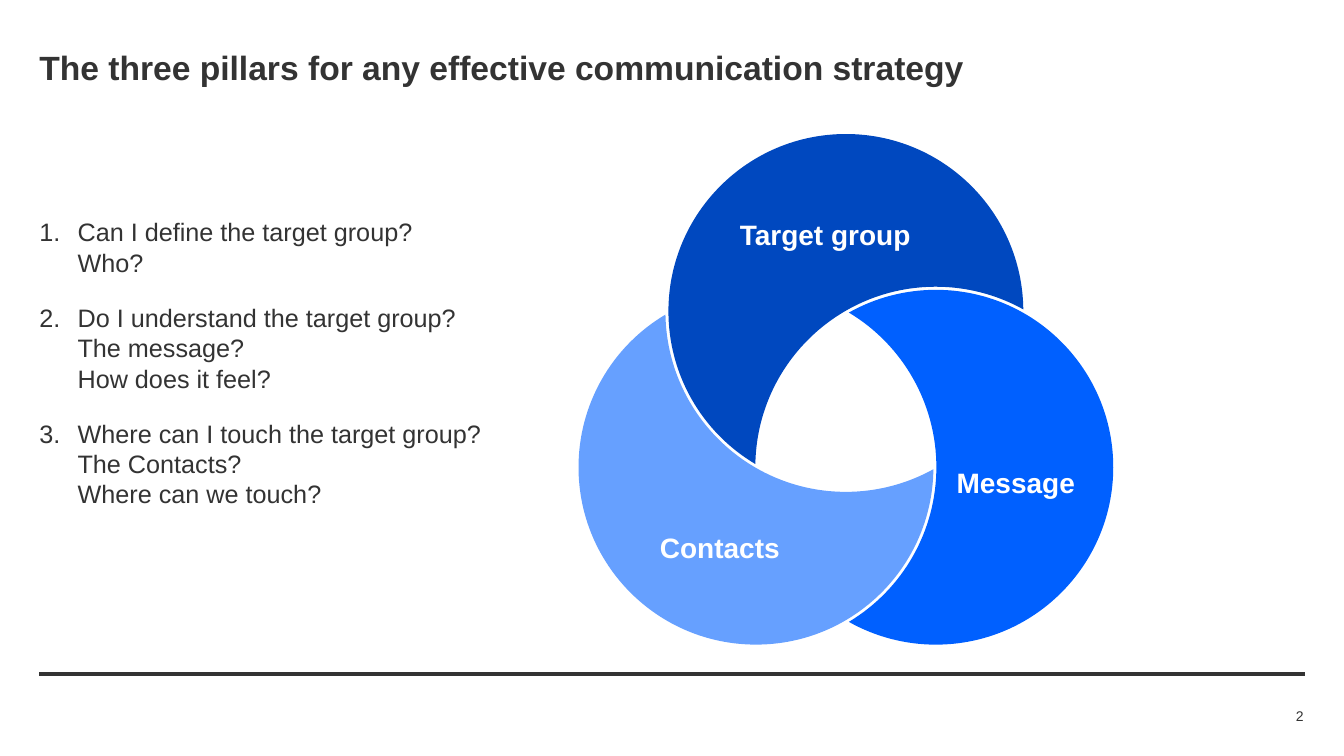
from math import acos, ceil, cos, floor, hypot, pi, radians, sin, tan

from lxml.etree import SubElement
from pptx import Presentation
from pptx.dml.color import RGBColor
from pptx.enum.shapes import MSO_CONNECTOR
from pptx.enum.text import MSO_ANCHOR, MSO_AUTO_SIZE, PP_ALIGN
from pptx.oxml.ns import qn
from pptx.util import Inches, Pt

DARK = RGBColor(0x33, 0x33, 0x33)
WHITE = RGBColor(0xFF, 0xFF, 0xFF)
NAVY = RGBColor(0x00, 0x48, 0xBF)
BLUE = RGBColor(0x00, 0x60, 0xFF)
SKY = RGBColor(0x66, 0xA0, 0xFF)

TITLE = "The three pillars for any effective communication strategy"
QUESTIONS = [
    ["Can I define the target group?", "Who?"],
    ["Do I understand the target group?", "The message?", "How does it feel?"],
    ["Where can I touch the target group?", "The Contacts?", "Where can we touch?"],
]
PILLARS = [
    ("Contacts", SKY, 150, (6.54, 5.26, 1.2, 0.34)),
    ("Message", BLUE, 30, (9.48, 4.61, 1.19, 0.34)),
    ("Target group", NAVY, 270, (7.33, 2.15, 1.71, 0.34)),
]
PAGE_NUMBER = "2"

RING_CENTER = (8.39, 4.12)
RING_RADIUS = 1.03
CIRCLE_RADIUS = 1.76
CUT_RADIUS = 1.79


def point_on(center, radius, angle):
    return center[0] + radius * cos(angle), center[1] + radius * sin(angle)


def arc_curves(center, radius, start, end):
    quarter = pi / 2
    low, high = sorted((start, end))
    turns = [index * quarter for index in range(ceil(low / quarter), floor(high / quarter) + 1)]
    angles = [start] + sorted(turns, reverse=end < start) + [end]
    curves = []
    for first, last in zip(angles, angles[1:]):
        reach = 4 / 3 * tan((last - first) / 4) * radius
        x1, y1 = point_on(center, radius, first)
        x2, y2 = point_on(center, radius, last)
        curves.append([
            (x1 - reach * sin(first), y1 + reach * cos(first)),
            (x2 + reach * sin(last), y2 - reach * cos(last)),
            (x2, y2),
        ])
    return curves


def crescent_curves(angle):
    center = point_on(RING_CENTER, RING_RADIUS, radians(angle))
    cutter = point_on(RING_CENTER, RING_RADIUS, radians(angle + 120))
    distance = hypot(cutter[0] - center[0], cutter[1] - center[1])
    toward = radians(angle + 150)
    outer = acos((distance**2 + CIRCLE_RADIUS**2 - CUT_RADIUS**2) / (2 * distance * CIRCLE_RADIUS))
    inner = acos((distance**2 + CUT_RADIUS**2 - CIRCLE_RADIUS**2) / (2 * distance * CUT_RADIUS))
    return arc_curves(center, CIRCLE_RADIUS, toward + outer, toward + 2 * pi - outer) + arc_curves(
        cutter, CUT_RADIUS, toward + pi + inner, toward + pi - inner
    )


def add_crescent(slide, angle, color):
    curves = crescent_curves(angle)
    nodes = [(Inches(x), Inches(y)) for *controls, (x, y) in curves]
    builder = slide.shapes.build_freeform(*nodes[-1])
    builder.add_line_segments(nodes, close=True)
    shape = builder.convert_to_shape()
    segments = list(shape._element.iter(qn("a:lnTo")))
    for segment, curve in zip(segments, curves):
        bezier = segment.getparent().makeelement(qn("a:cubicBezTo"))
        for x, y in curve:
            SubElement(bezier, qn("a:pt"), x=str(Inches(x) - shape.left), y=str(Inches(y) - shape.top))
        segment.getparent().replace(segment, bezier)
    shape.shadow.inherit = False
    shape.fill.solid()
    shape.fill.fore_color.rgb = color
    shape.line.fill.background()


def prepare_frame(shape, anchor, wrap=True):
    frame = shape.text_frame
    frame.margin_left = frame.margin_right = frame.margin_top = frame.margin_bottom = 0
    frame.auto_size = MSO_AUTO_SIZE.NONE
    frame.vertical_anchor = anchor
    frame.word_wrap = wrap
    return frame


def add_text_box(slide, box, anchor, wrap=True):
    return prepare_frame(slide.shapes.add_textbox(*map(Inches, box)), anchor, wrap)


def add_lines(paragraph, lines, size, color, bold=False):
    for index, line in enumerate(lines):
        if index:
            paragraph.add_line_break()
        run = paragraph.add_run()
        run.text = line
        run.font.name = "Arial"
        run.font.size = Pt(size)
        run.font.bold = bold
        run.font.color.rgb = color


def number_paragraph(paragraph):
    properties = paragraph._p.get_or_add_pPr()
    properties.set("marL", str(Inches(0.38)))
    properties.set("indent", str(-Inches(0.38)))
    SubElement(properties, qn("a:buFont"), typeface="+mj-lt")
    SubElement(properties, qn("a:buAutoNum"), type="arabicPeriod")


def add_title(slide):
    title = slide.shapes.title
    title.left, title.top, title.width, title.height = map(Inches, (0.39, 0.47, 12.54, 0.44))
    paragraph = prepare_frame(title, MSO_ANCHOR.TOP).paragraphs[0]
    paragraph.alignment = PP_ALIGN.LEFT
    add_lines(paragraph, [TITLE], 24, DARK, bold=True)


def add_questions(slide):
    frame = add_text_box(slide, (0.39, 2.15, 4.66, 2.93), MSO_ANCHOR.TOP)
    for index, lines in enumerate(QUESTIONS):
        paragraph = frame.add_paragraph() if index else frame.paragraphs[0]
        number_paragraph(paragraph)
        if index:
            paragraph.space_before = Pt(18)
        add_lines(paragraph, lines, 18, DARK)


def add_pillars(slide):
    for label, color, angle, box in PILLARS:
        add_crescent(slide, angle, color)
    for label, color, angle, box in PILLARS:
        paragraph = add_text_box(slide, box, MSO_ANCHOR.MIDDLE, wrap=False).paragraphs[0]
        paragraph.alignment = PP_ALIGN.CENTER
        add_lines(paragraph, [label], 20, WHITE, bold=True)


def add_footer(slide):
    rule = slide.shapes.add_connector(
        MSO_CONNECTOR.STRAIGHT, Inches(0.39), Inches(6.69), Inches(12.94), Inches(6.69)
    )
    rule.line.color.rgb = DARK
    rule.line.width = Pt(3)
    SubElement(rule._element.spPr, qn("a:effectLst"))
    paragraph = add_text_box(slide, (11.87, 6.99, 1.06, 0.22), MSO_ANCHOR.MIDDLE).paragraphs[0]
    paragraph.alignment = PP_ALIGN.RIGHT
    add_lines(paragraph, [PAGE_NUMBER], 10, DARK)


def main():
    presentation = Presentation()
    presentation.slide_width = Inches(13.33)
    presentation.slide_height = Inches(7.5)
    slide = presentation.slides.add_slide(presentation.slide_layouts[5])
    add_title(slide)
    add_questions(slide)
    add_pillars(slide)
    add_footer(slide)
    presentation.save("out.pptx")


if __name__ == "__main__":
    main()
